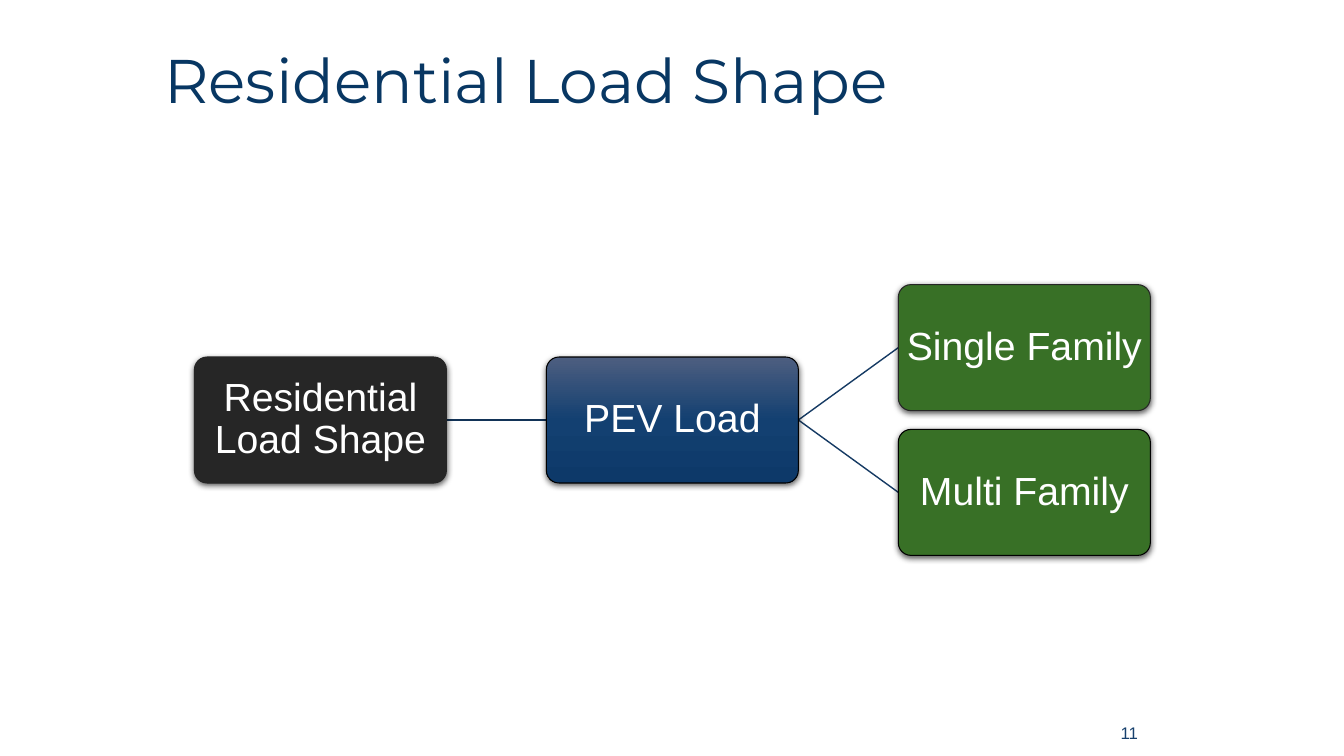
from dataclasses import dataclass

from pptx import Presentation
from pptx import util as u
from pptx.dml.color import RGBColor
from pptx.enum import shapes, text
from pptx.oxml import parse_xml
from pptx.oxml.ns import nsdecls, qn

# Layout rules, in points
NODE_W, NODE_H = 180, 90
FIRST_LEFT, COLUMN_STEP = 138.9, 251.4
MIDDLE_Y, BRANCH_OFFSET = 300, 51.7
GREEN, DARK, BLACK, WHITE = "387026", "262626", "000000", "FFFFFF"


@dataclass(frozen=True)
class Node:
    label: str
    column: int
    row: int  # -1 above, 0 on, 1 below the middle line
    fills: tuple[str, ...]  # several colours make a vertical gradient
    line: str

    @property
    def left(self) -> float:
        return FIRST_LEFT + self.column * COLUMN_STEP

    @property
    def center_y(self) -> float:
        return MIDDLE_Y + self.row * BRANCH_OFFSET


@dataclass(frozen=True)
class Link:
    start: Node
    end: Node
    color: str


@dataclass(frozen=True)
class Label:
    words: str
    box: tuple[float, float, float, float]
    font: str
    size: float
    color: str
    align: text.PP_ALIGN
    spacing: float = 1.0


RESIDENTIAL = Node("Residential Load Shape", 0, 0, (DARK,), DARK)
PEV = Node("PEV Load", 1, 0, ("4D5E80", "134071", "0D3969"), BLACK)
SINGLE = Node("Single Family", 2, -1, (GREEN,), DARK)
MULTI = Node("Multi Family", 2, 1, (GREEN,), BLACK)
NODES = (RESIDENTIAL, PEV, SINGLE, MULTI)
LINKS = (
    Link(RESIDENTIAL, PEV, "123357"),
    Link(PEV, SINGLE, "153A63"),
    Link(PEV, MULTI, "153A63"),
)
LABELS = (
    Label("Residential Load Shape", (110.2, 18.7, 784, 82), "Montserrat", 44,
          "083763", text.PP_ALIGN.LEFT, 0.9),
    Label("11", (678.2, 509, 141.8, 28.8), "Arial", 12, "17406D", text.PP_ALIGN.RIGHT),
)


def rgb(value: str) -> RGBColor:
    return RGBColor.from_string(value)


def write(tf, words: str, font: str, size: float, color: str,
          align: text.PP_ALIGN, spacing: float) -> None:
    tf.word_wrap = True
    tf.vertical_anchor = text.MSO_ANCHOR.MIDDLE
    p = tf.paragraphs[0]
    p.alignment = align
    p.line_spacing = spacing
    r = p.add_run()
    r.text = words
    r.font.name = font
    r.font.size = u.Pt(size)
    r.font.color.rgb = rgb(color)


def fill_gradient(sp, colors: tuple[str, ...]) -> None:
    stops = "".join(
        f'<a:gs pos="{100000 * i // (len(colors) - 1)}"><a:srgbClr val="{c}"/></a:gs>'
        for i, c in enumerate(colors))
    sp.fill.background()
    spPr = sp._element.spPr
    spPr.replace(spPr.find(qn("a:noFill")), parse_xml(
        f'<a:gradFill {nsdecls("a")} rotWithShape="1"><a:gsLst>{stops}</a:gsLst>'
        '<a:lin ang="5400000" scaled="0"/></a:gradFill>'))


def add_shadow(sp) -> None:
    sp.shadow.inherit = False
    sp._element.spPr.find(qn("a:effectLst")).append(parse_xml(
        f'<a:outerShdw {nsdecls("a")} blurRad="{u.Pt(4.5)}" dist="{u.Pt(1.5)}" '
        'dir="5400000" rotWithShape="0"><a:srgbClr val="000000">'
        '<a:alpha val="63000"/></a:srgbClr></a:outerShdw>'))


def draw_node(s, node: Node) -> None:
    sp = s.shapes.add_shape(
        shapes.MSO_SHAPE.ROUNDED_RECTANGLE, u.Pt(node.left),
        u.Pt(node.center_y - NODE_H / 2), u.Pt(NODE_W), u.Pt(NODE_H))
    sp.adjustments[0] = 0.1
    if len(node.fills) > 1:
        fill_gradient(sp, node.fills)
    else:
        sp.fill.solid()
        sp.fill.fore_color.rgb = rgb(node.fills[0])
    sp.line.color.rgb = rgb(node.line)
    sp.line.width = u.Pt(0.75)
    add_shadow(sp)
    tf = sp.text_frame
    tf.margin_left = tf.margin_right = tf.margin_top = tf.margin_bottom = u.Pt(1.4)
    write(tf, node.label, "Arial", 28, WHITE, text.PP_ALIGN.CENTER, 0.9)


def draw_link(s, link: Link) -> None:
    line = s.shapes.add_connector(
        shapes.MSO_CONNECTOR.STRAIGHT,
        u.Pt(link.start.left + NODE_W), u.Pt(link.start.center_y),
        u.Pt(link.end.left), u.Pt(link.end.center_y))
    line.line.color.rgb = rgb(link.color)
    line.line.width = u.Pt(1)
    line._element.spPr.append(parse_xml(f'<a:effectLst {nsdecls("a")}/>'))


def draw_label(s, label: Label) -> None:
    sp = s.shapes.add_textbox(*(u.Pt(v) for v in label.box))
    write(sp.text_frame, label.words, label.font, label.size, label.color,
          label.align, label.spacing)


def main() -> None:
    prs = Presentation()
    prs.slide_width, prs.slide_height = u.Pt(960), u.Pt(540)
    s = prs.slides.add_slide(prs.slide_layouts[6])

    # Title and page number
    for label in LABELS:
        draw_label(s, label)

    # Tree: links behind nodes
    for link in LINKS:
        draw_link(s, link)
    for node in NODES:
        draw_node(s, node)

    prs.save("out.pptx")


if __name__ == "__main__":
    main()
